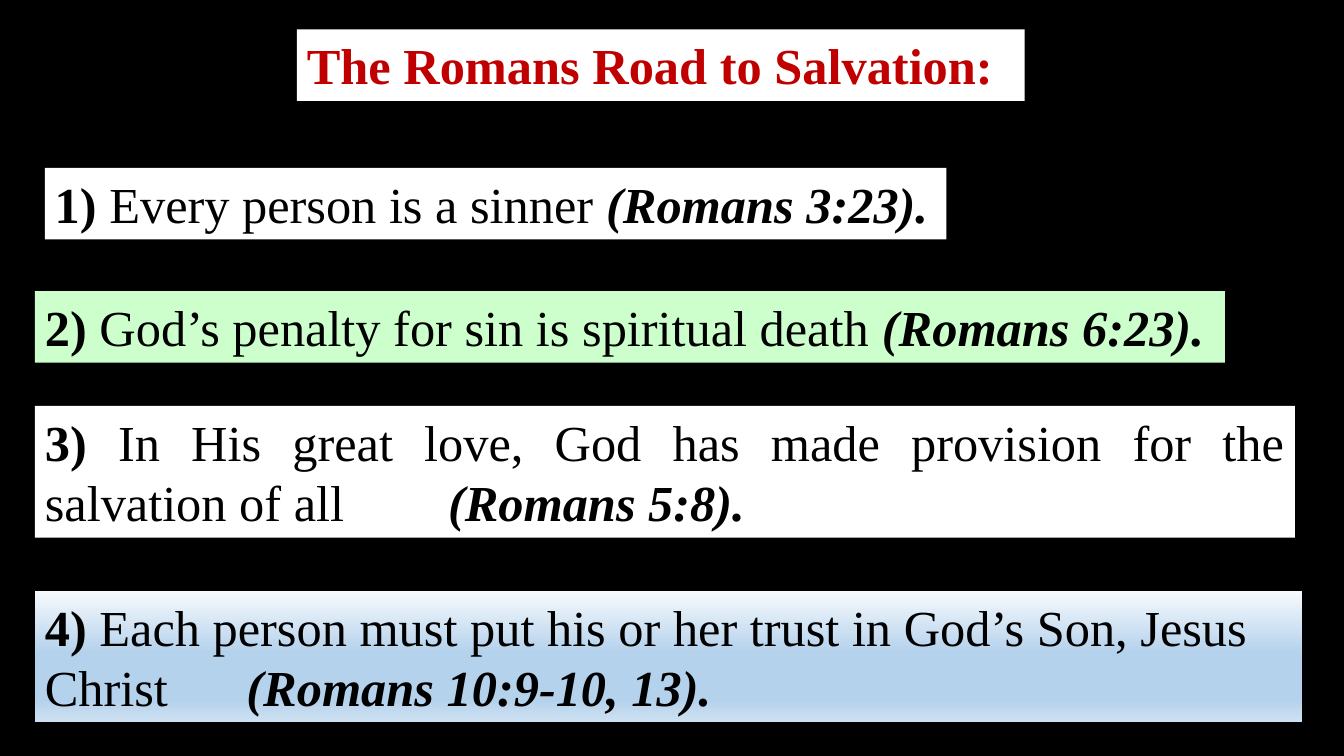
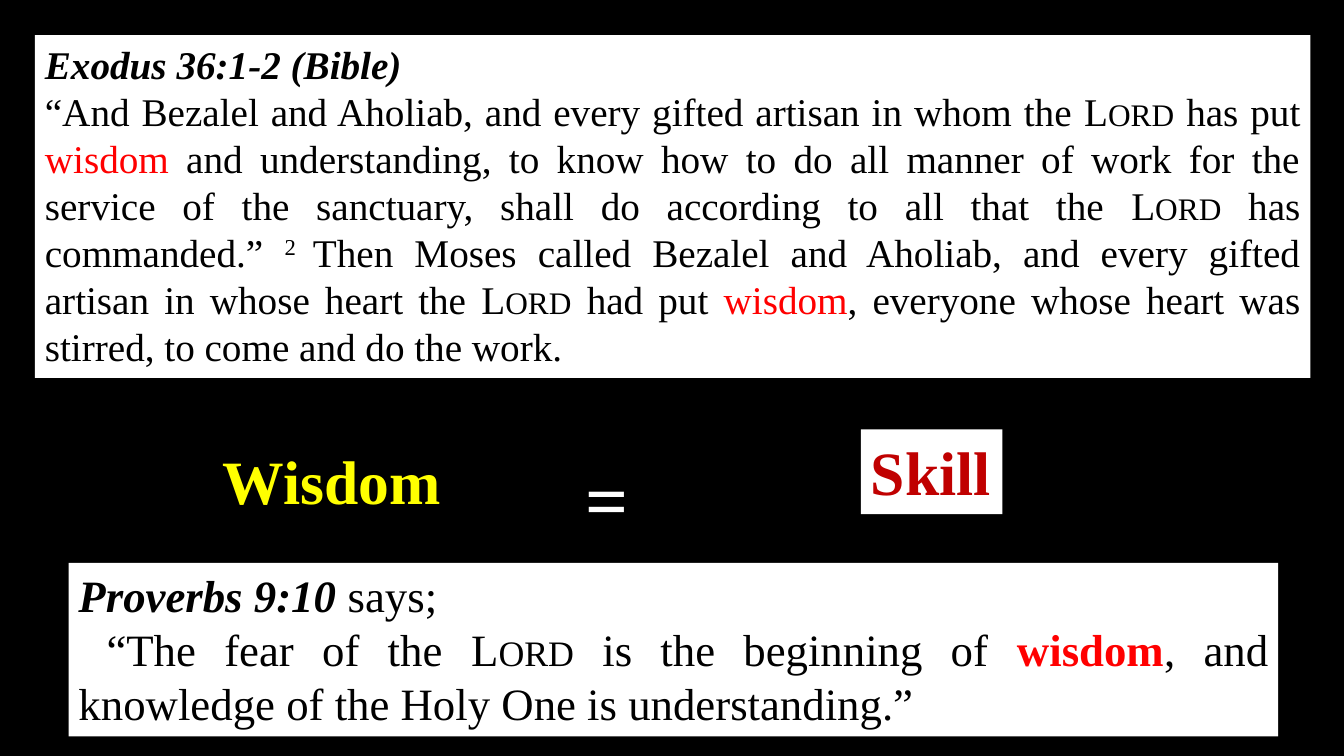
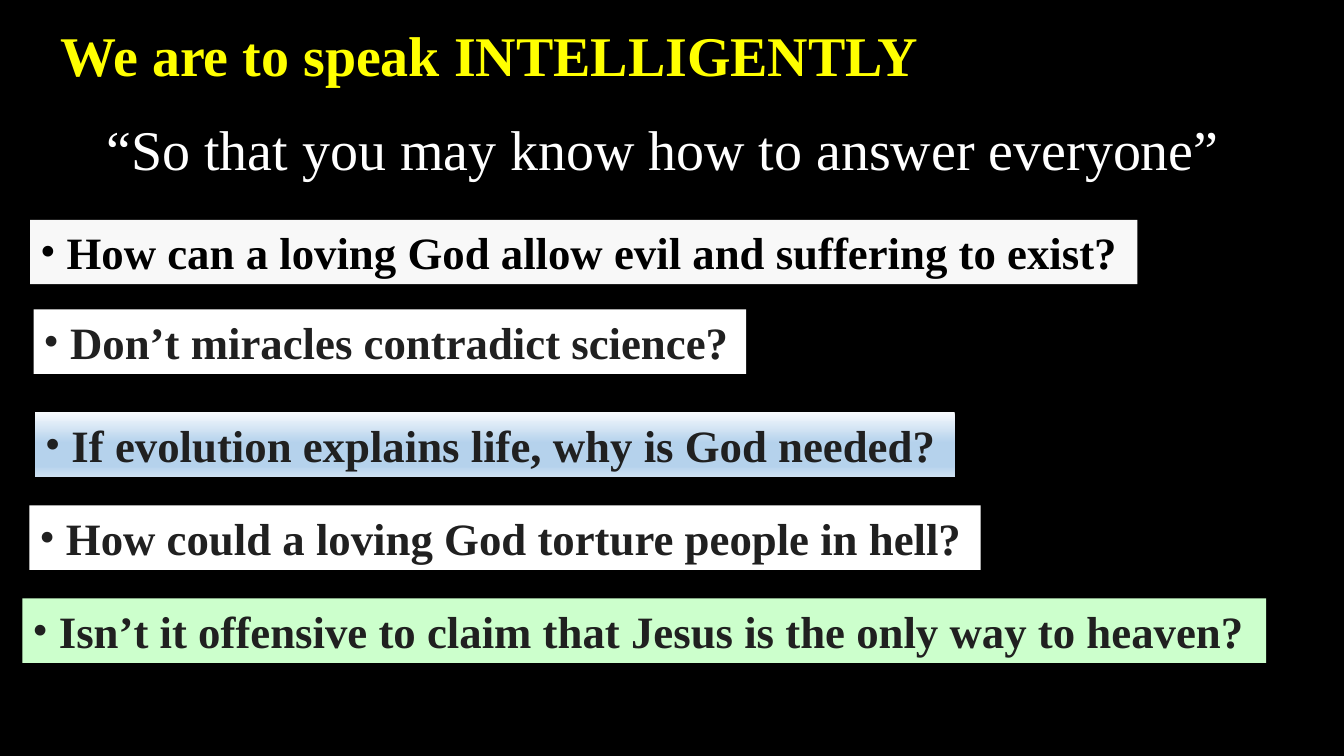
from lxml import etree
from pptx import Presentation
from pptx.dml.color import RGBColor
from pptx.enum.shapes import MSO_SHAPE
from pptx.enum.text import MSO_ANCHOR, MSO_AUTO_SIZE, PP_ALIGN
from pptx.oxml.ns import qn
from pptx.util import Pt

RECTANGLE = MSO_SHAPE.RECTANGLE
TOP = MSO_ANCHOR.TOP
NO_AUTOSIZE = MSO_AUTO_SIZE.NONE
LEFT, JUSTIFY = PP_ALIGN.LEFT, PP_ALIGN.JUSTIFY

BLACK = RGBColor(0x00, 0x00, 0x00)
CHARCOAL = RGBColor(0x20, 0x20, 0x20)
WHITE = RGBColor(0xFF, 0xFF, 0xFF)
OFF_WHITE = RGBColor(0xF8, 0xF8, 0xF8)
MINT = RGBColor(0xCC, 0xFF, 0xCC)
YELLOW = RGBColor(0xFF, 0xFF, 0x00)
RED = RGBColor(0xFF, 0x00, 0x00)
DARK_RED = RGBColor(0xC0, 0x00, 0x00)
ICE = RGBColor(0xF7, 0xFA, 0xFD)
SKY = RGBColor(0xB5, 0xD2, 0xEC)
PALE_SKY = RGBColor(0xCE, 0xE1, 0xF2)
SKY_FADE = ((0, ICE), (47, SKY), (83, SKY), (100, PALE_SKY))

FONT = "Times New Roman"
TITLE_ONLY, BLANK = 5, 6
BULLET_INDENT = 19

LORD = ("Lord", "small")


# Fills
def fill_box(box, fill):
    """Fill with one colour, or with a downward fade given as stops."""
    if isinstance(fill, RGBColor):
        box.fill.solid()
        box.fill.fore_color.rgb = fill
        return
    box.fill.gradient()
    box.fill.gradient_angle = 270
    stops = next(box._element.spPr.iter(qn("a:gsLst")))
    for old_stop in list(stops):
        stops.remove(old_stop)
    for percent, color in fill:
        stop = etree.SubElement(stops, qn("a:gs"), pos=str(percent * 1000))
        etree.SubElement(stop, qn("a:srgbClr"), val=str(color))


# Text
def add_run(paragraph, text, style):
    run = paragraph.add_run()
    run.text = text
    styles = style.split()
    if "bold" in styles:
        run.font.bold = True
    if "italic" in styles:
        run.font.italic = True
    if "red" in styles:
        run.font.color.rgb = RED
    if "small" in styles:
        run.font._element.set("cap", "small")
    if "super" in styles:
        run.font._element.set("baseline", "30000")


def write_paragraph(paragraph, runs, size, color, bold=False, align=LEFT):
    """Write a string, or a list of strings and (string, style) pairs."""
    paragraph.alignment = align
    font = paragraph.font
    font.name, font.size, font.color.rgb = FONT, Pt(size), color
    if bold:
        font.bold = True
    for run in [runs] if isinstance(runs, str) else runs:
        text, style = (run, "") if isinstance(run, str) else run
        add_run(paragraph, text, style)


def set_indent(paragraph, first_line, left=0):
    properties = paragraph._p.get_or_add_pPr()
    properties.set("marL", str(Pt(left)))
    properties.set("indent", str(Pt(first_line)))


def set_bullet(paragraph):
    set_indent(paragraph, -BULLET_INDENT, BULLET_INDENT)
    properties = paragraph._p.pPr
    properties.insert(0, etree.Element(qn("a:buFont"), typeface=FONT))
    properties.insert(1, etree.Element(qn("a:buChar"), char="•"))


def set_tab_stop(paragraph, position):
    tabs = etree.Element(qn("a:tabLst"))
    etree.SubElement(tabs, qn("a:tab"), pos=str(Pt(position)), algn="l")
    paragraph._p.get_or_add_pPr().insert(0, tabs)


def prepare_frame(shape):
    frame = shape.text_frame
    frame.auto_size = NO_AUTOSIZE
    frame.word_wrap = True
    frame.vertical_anchor = TOP
    return frame


# Elements
def add_title(slide, bounds, text, size, color, fill=None):
    title = slide.shapes.title
    title.left, title.top, title.width, title.height = map(Pt, bounds)
    if fill is not None:
        fill_box(title, fill)
    write_paragraph(prepare_frame(title).paragraphs[0], text, size, color, True)


def add_label(slide, bounds, text, size, color, bold=False):
    label = slide.shapes.add_textbox(*map(Pt, bounds))
    write_paragraph(prepare_frame(label).paragraphs[0], text, size, color, bold)


def add_panel(slide, bounds, fill, lines, size, color=BLACK, bold=False,
              align=LEFT):
    """Add a filled box of text and return its paragraphs."""
    panel = slide.shapes.add_shape(RECTANGLE, *map(Pt, bounds))
    panel.shadow.inherit = False
    panel.line.fill.background()
    fill_box(panel, fill)
    frame = prepare_frame(panel)
    for index, runs in enumerate(lines):
        paragraph = frame.add_paragraph() if index else frame.paragraphs[0]
        write_paragraph(paragraph, runs, size, color, bold, align)
    return frame.paragraphs


# Slides
def build_romans_road(slide):
    add_title(slide, (212, 21, 520, 51), "The Romans Road to Salvation:",
              36, DARK_RED, WHITE)
    # Bounds, fill, alignment, tab stop, statement, verse
    steps = [
        ((32, 120, 644, 51), WHITE, LEFT, None,
         " Every person is a sinner ", "(Romans 3:23)."),
        ((25, 208, 850, 51), MINT, LEFT, None,
         " God’s penalty for sin is spiritual death ", "(Romans 6:23)."),
        ((25, 290, 900, 94), WHITE, JUSTIFY, 288,
         " In His great love, God has made provision for the salvation of all\t",
         "(Romans 5:8)."),
        ((25, 422, 905, 94), SKY_FADE, LEFT, 144,
         " Each person must put his or her trust in God’s Son, Jesus Christ\t",
         "(Romans 10:9-10, 13)."),
    ]
    for number, (bounds, fill, align, tab, statement, verse) in enumerate(steps, 1):
        runs = [(f"{number})", "bold"), statement, (verse, "bold italic")]
        step = add_panel(slide, bounds, fill, [runs], 36, align=align)[0]
        if tab:
            set_tab_stop(step, tab)


def build_wisdom(slide):
    # Wisdom equals skill
    add_label(slide, (152, 312.5, 172, 60.5), "Wisdom", 44, YELLOW, True)
    add_label(slide, (411, 319, 46, 73), "=", 54, WHITE, True)
    add_panel(slide, (615, 306.7, 101, 60.5), WHITE, ["Skill"], 44, DARK_RED, True)

    # Scripture passages
    exodus = [
        [("Exodus 36:1-2 (Bible)", "bold italic")],
        ["“And Bezalel and Aholiab, and every gifted artisan in whom the ", LORD,
         " has put ", ("wisdom", "red"),
         " and understanding, to know how to do all manner of work for the "
         "service of the sanctuary, shall do according to all that the ", LORD,
         " has commanded.” ", ("2 ", "super"),
         "Then Moses called Bezalel and Aholiab, and every gifted artisan in "
         "whose heart the ", LORD, " had put ", ("wisdom", "red"),
         ", everyone whose heart was stirred, to come and do the work."],
    ]
    add_panel(slide, (25, 25, 911, 245), WHITE, exodus, 28, align=JUSTIFY)
    proverbs = [
        [("Proverbs 9:10 ", "bold italic"), "says;"],
        ["“The fear of the ", LORD, " is the beginning of ",
         ("wisdom", "bold red"),
         ", and knowledge of the Holy One is understanding.”"],
    ]
    quotation = add_panel(slide, (49, 402, 864, 124), WHITE, proverbs, 32,
                          align=JUSTIFY)[1]
    set_indent(quotation, 20)


def build_questions(slide):
    add_title(slide, (36, 11, 634, 55), "We are to speak INTELLIGENTLY", 40, YELLOW)
    add_label(slide, (69, 78.5, 828, 55),
              "“So that you may know how to answer everyone”", 40, WHITE)
    # Left, top, width, fill, text colour, question
    questions = [
        (21.5, 157, 791, OFF_WHITE, BLACK,
         "How can a loving God allow evil and suffering to exist?"),
        (24, 221, 509, WHITE, CHARCOAL, "Don’t miracles contradict science?"),
        (25, 294.5, 657, SKY_FADE, CHARCOAL,
         "If evolution explains life, why is God needed?"),
        (21, 361, 679.5, WHITE, CHARCOAL,
         "How could a loving God torture people in hell?"),
        (16, 427.5, 888.5, MINT, CHARCOAL,
         "Isn’t it offensive to claim that Jesus is the only way to heaven?"),
    ]
    for left, top, width, fill, color, question in questions:
        line = add_panel(slide, (left, top, width, 46), fill, [question], 32,
                         color, True)[0]
        set_bullet(line)


def main():
    prs = Presentation()
    prs.slide_width, prs.slide_height = Pt(960), Pt(540)
    backdrop = prs.slide_master.background.fill
    backdrop.solid()
    backdrop.fore_color.rgb = BLACK
    for layout, build in ((TITLE_ONLY, build_romans_road), (BLANK, build_wisdom),
                          (TITLE_ONLY, build_questions)):
        build(prs.slides.add_slide(prs.slide_layouts[layout]))
    prs.save("out.pptx")


if __name__ == "__main__":
    main()
